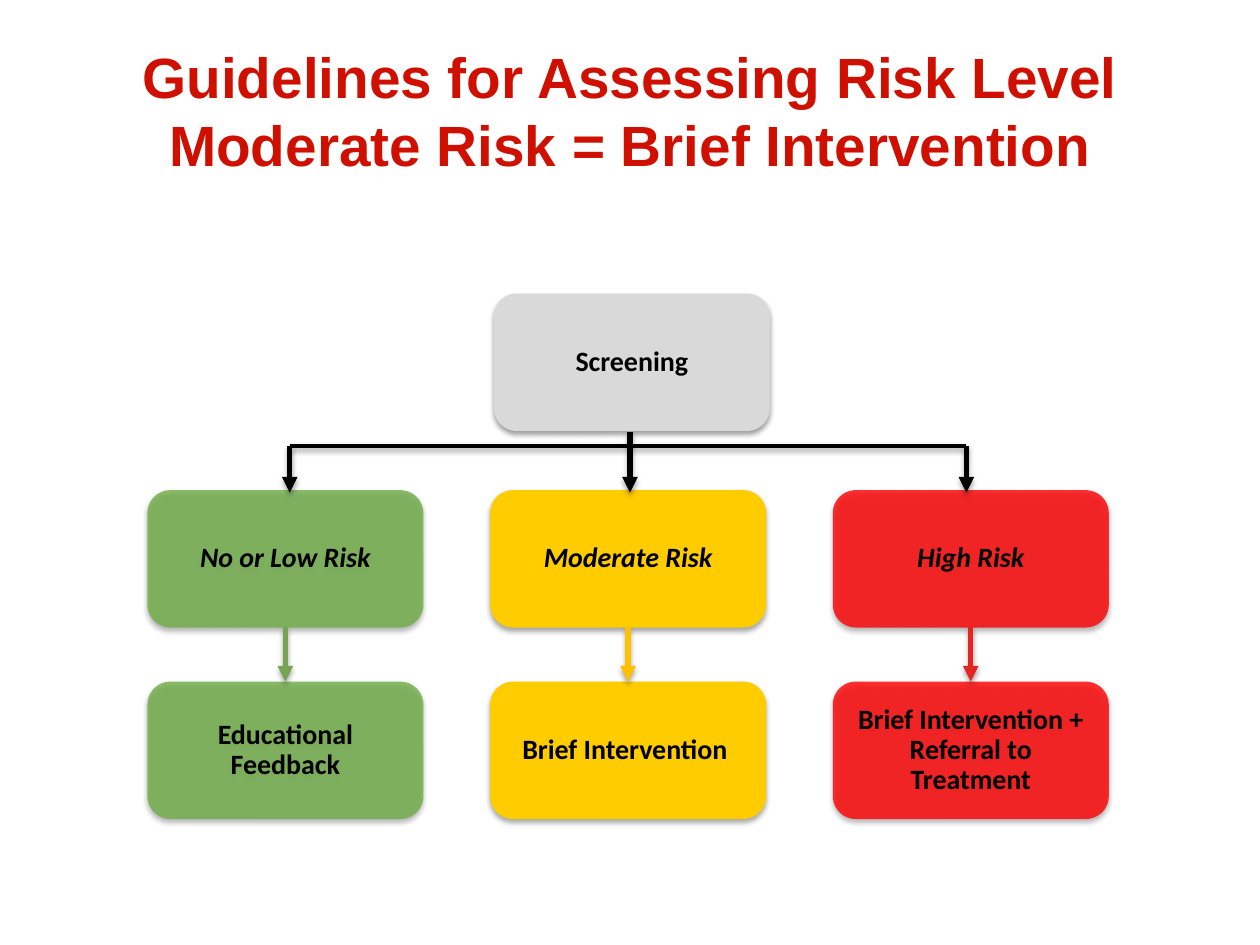
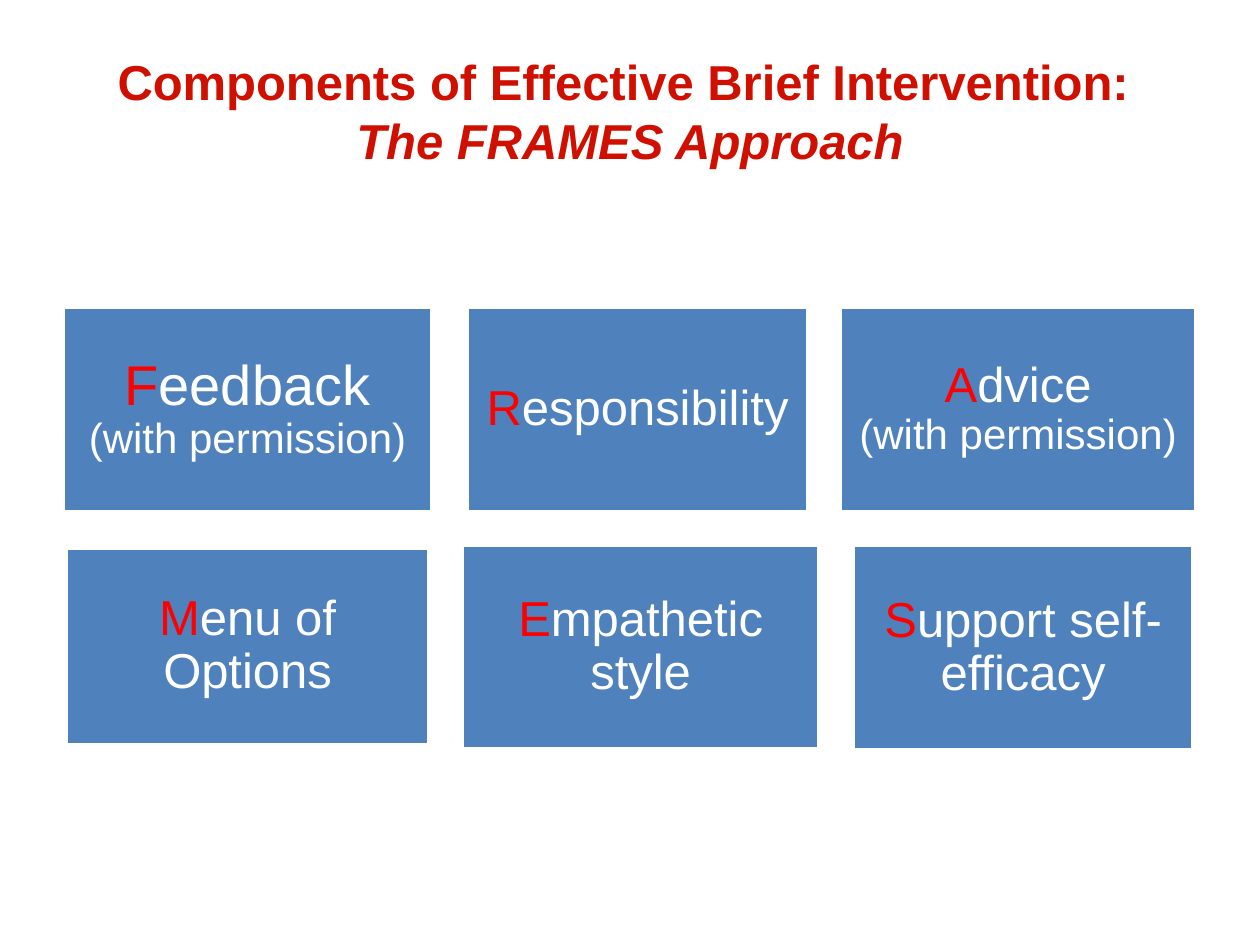
"""Builds two slides on risk levels and the FRAMES approach to brief intervention."""
from lxml import etree
from pptx import Presentation
from pptx.dml.color import RGBColor
from pptx.enum.shapes import MSO_CONNECTOR, MSO_SHAPE
from pptx.enum.text import MSO_ANCHOR, PP_ALIGN
from pptx.oxml.ns import qn
from pptx.util import Inches, Pt

ROUNDED, RECT = MSO_SHAPE.ROUNDED_RECTANGLE, MSO_SHAPE.RECTANGLE
STRAIGHT = MSO_CONNECTOR.STRAIGHT
MIDDLE, CENTER = MSO_ANCHOR.MIDDLE, PP_ALIGN.CENTER
BOTTOM_SIDE, TOP_SIDE = 2, 0
COLORS = {
    "title": "CF1001", "black": "000000", "white": "FFFFFF", "grey": "D9D9D9",
    "green": "70AD47", "yellow": "FFCC00", "red": "FF0000", "blue": "4F81BD",
    "green arrow": "75A554", "yellow arrow": "FFC000", "red arrow": "E32623",
}
RGB = {name: RGBColor.from_string(value) for name, value in COLORS.items()}


def add_shadow(part, opacity=35):
    """Give a box or connector a soft shadow straight below it."""
    effects = etree.SubElement(part._element.spPr, qn("a:effectLst"))
    shadow = etree.SubElement(effects, qn("a:outerShdw"), blurRad=str(Pt(3.1)),
                              dist=str(Pt(1.8)), dir="5400000", rotWithShape="0")
    black = etree.SubElement(shadow, qn("a:srgbClr"), val=COLORS["black"])
    etree.SubElement(black, qn("a:alpha"), val=str(opacity * 1000))


def add_box(slide, kind, place, color, inset):
    """Add a filled box and return it with its centred first paragraph."""
    box = slide.shapes.add_shape(kind, *[Inches(length) for length in place])
    box.fill.solid()
    box.fill.fore_color.rgb = RGB[color]
    frame = box.text_frame
    frame.word_wrap = True
    frame.vertical_anchor = MIDDLE
    frame.margin_left = frame.margin_right = Inches(inset)
    frame.margin_top = frame.margin_bottom = Inches(inset)
    paragraph = frame.paragraphs[0]
    paragraph.alignment = CENTER
    paragraph.line_spacing = 0.9
    return box, paragraph


prs = Presentation()
prs.slide_width, prs.slide_height = Inches(10), Inches(7.5)

titles = [
    (32.4, [("Guidelines for Assessing Risk Level", False),
            ("Moderate Risk = Brief Intervention", False)]),
    (28, [("Components of Effective Brief Intervention: ", False),
          ("The FRAMES Approach", True)]),
]
slides = []
for size, lines in titles:
    slide = prs.slides.add_slide(prs.slide_layouts[6])
    slides.append(slide)
    title = slide.shapes.add_textbox(Inches(0.5), Inches(0.25), Inches(9), Inches(1.25))
    title.text_frame.word_wrap = True
    title.text_frame.vertical_anchor = MIDDLE
    heading = title.text_frame.paragraphs[0]
    heading.alignment = CENTER
    heading.font.name, heading.font.size, heading.font.bold = "Arial", Pt(size), True
    heading.font.color.rgb = RGB["title"]
    for number, (line, italic) in enumerate(lines):
        if number:
            heading.add_line_break()
        run = heading.add_run()
        run.text = line
        if italic:
            run.font.italic = True
risk_slide, frames_slide = slides

BOX_W, BOX_H = 2.19, 1.09
FIRST_LEFT, COLUMN_STEP = 1.17, 2.72
RISK_TOP, RESPONSE_TOP = 3.89, 5.41
risk_columns = [
    ("No or Low Risk", "Educational Feedback", "green", 80),
    ("Moderate Risk", "Brief Intervention ", "yellow", 100),
    ("High Risk", "Brief Intervention + Referral to Treatment", "red", 80),
]
flow_boxes = [("Screening", 3.92, 2.33, "grey", 100, False)]
for column, (risk, response, color, opacity) in enumerate(risk_columns):
    left = FIRST_LEFT + column * COLUMN_STEP
    flow_boxes.append((risk, left, RISK_TOP, color, opacity, True))
    flow_boxes.append((response, left, RESPONSE_TOP, color, opacity, False))

steps = []
for label, left, top, color, opacity, italic in flow_boxes:
    step, paragraph = add_box(risk_slide, ROUNDED, (left, top, BOX_W, BOX_H), color, 0.06)
    if opacity < 100:
        fill_color = step._element.spPr.find(qn("a:solidFill"))[0]
        etree.SubElement(fill_color, qn("a:alpha"), val=str(opacity * 1000))
    step.line.fill.background()
    add_shadow(step, 38 if label == "Screening" else 35)
    paragraph.text = label
    font = paragraph.font
    font.name, font.size, font.bold, font.italic = "Calibri", Pt(16), True, italic
    font.color.rgb = RGB["black"]
    steps.append(step)

BRANCH_Y, DROP_END = 3.54, 3.91
links = [
    ((2.3, BRANCH_Y), (2.3, DROP_END), "black", 3, None),
    ((5, 3.43), (5, DROP_END), "black", 3, None),
    ((7.67, BRANCH_Y), (7.67, DROP_END), "black", 3, None),
    ((2.3, BRANCH_Y), (7.67, BRANCH_Y), "black", 2.25, None),
]
for column, (risk, response, color, opacity) in enumerate(risk_columns):
    center = FIRST_LEFT + column * COLUMN_STEP + BOX_W / 2
    ends = steps[1 + 2 * column], steps[2 + 2 * column]
    links.append(((center, RISK_TOP + BOX_H), (center, RESPONSE_TOP),
                  color + " arrow", 3, ends))

for start, end, color, width, ends in links:
    link = risk_slide.shapes.add_connector(
        STRAIGHT, *[Inches(length) for length in start + end])
    if ends:
        link.begin_connect(ends[0], BOTTOM_SIDE)
        link.end_connect(ends[1], TOP_SIDE)
    link.line.color.rgb = RGB[color]
    link.line.width = Pt(width)
    if start[1] != end[1]:
        etree.SubElement(link._element.spPr.find(qn("a:ln")), qn("a:tailEnd"), type="triangle")
    add_shadow(link)

components = [
    ((0.5, 2.44, 2.93, 1.62), 32, "Feedback", "(with permission)"),
    ((3.71, 2.44, 2.7, 1.62), 28, "Responsibility", ""),
    ((6.67, 2.44, 2.82, 1.62), 28, "Advice", "(with permission)"),
    ((0.53, 4.35, 2.87, 1.56), 28, "Menu of Options", ""),
    ((3.67, 4.33, 2.83, 1.61), 28, "Empathetic style", ""),
    ((6.77, 4.33, 2.7, 1.62), 28, "Support self-efficacy", ""),
]
for place, size, name, condition in components:
    component, paragraph = add_box(frames_slide, RECT, place, "blue", 0.12)
    component.shadow.inherit = False
    component.line.color.rgb = RGB["white"]
    component.line.width = Pt(2)
    paragraph.font.name, paragraph.font.size = "Arial", Pt(size)
    for text, color in ((name[0], "red"), (name[1:], "white")):
        run = paragraph.add_run()
        run.text = text
        run.font.color.rgb = RGB[color]
    if condition:
        note = component.text_frame.add_paragraph()
        note.text = condition
        note.alignment, note.line_spacing = CENTER, 0.9
        note.font.name, note.font.size = "Arial", Pt(24)
        note.font.color.rgb = RGB["white"]

prs.save("out.pptx")
